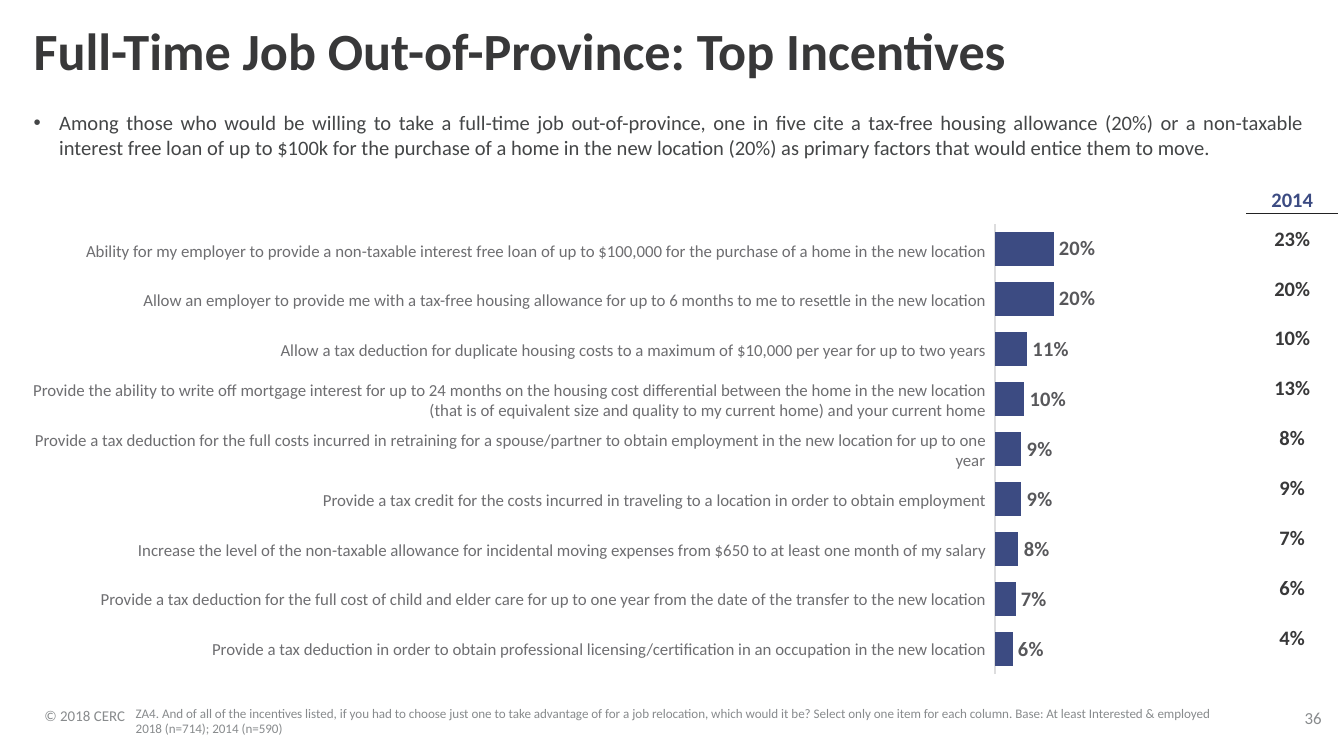
from typing import NamedTuple

from lxml import etree
from pptx import Presentation
from pptx.chart.data import CategoryChartData
from pptx.dml.color import RGBColor
from pptx.enum.chart import (XL_CHART_TYPE, XL_LABEL_POSITION,
                             XL_TICK_LABEL_POSITION, XL_TICK_MARK)
from pptx.enum.text import MSO_ANCHOR, MSO_AUTO_SIZE, PP_ALIGN
from pptx.oxml import parse_xml
from pptx.oxml.ns import nsdecls, qn
from pptx.util import Inches, Pt

LEFT, RIGHT, MID, FULL = PP_ALIGN.LEFT, PP_ALIGN.RIGHT, PP_ALIGN.CENTER, PP_ALIGN.JUSTIFY
TOP, BOTTOM, CENTER = MSO_ANCHOR.TOP, MSO_ANCHOR.BOTTOM, MSO_ANCHOR.MIDDLE
BAR, OUTSIDE = XL_CHART_TYPE.BAR_CLUSTERED, XL_LABEL_POSITION.OUTSIDE_END
NO_TICK, NO_LABEL = XL_TICK_MARK.NONE, XL_TICK_LABEL_POSITION.NONE
NO_FIT = MSO_AUTO_SIZE.NONE

FONT = "Calibri"
DARK = RGBColor(0x38, 0x38, 0x39)
TEXT = RGBColor(0x44, 0x46, 0x47)
GRAY = RGBColor(0x6E, 0x6E, 0x71)
PALE = RGBColor(0x88, 0x8B, 0x8D)
VALUE = RGBColor(0x58, 0x58, 0x5B)
AXIS = RGBColor(0xDD, 0xDD, 0xDE)
BLUE = RGBColor(0x3C, 0x4B, 0x82)


class Style(NamedTuple):
    size: float
    color: RGBColor
    bold: bool = False
    align: PP_ALIGN = LEFT
    anchor: MSO_ANCHOR = TOP
    line: float = 1.0


class Item(NamedTuple):
    label: str
    now: float
    past: str


ITEMS = [
    Item("Ability for my employer to provide a non-taxable interest free loan of up to "
         "$100,000 for the purchase of a home in the new location", 0.20, "23%"),
    Item("Allow an employer to provide me with a tax-free housing allowance for up to "
         "6 months to me to resettle in the new location", 0.20, "20%"),
    Item("Allow a tax deduction for duplicate housing costs to a maximum of $10,000 "
         "per year for up to two years", 0.11, "10%"),
    Item("Provide the ability to write off mortgage interest for up to 24 months on the "
         "housing cost differential between the home in the new location (that is of "
         "equivalent size and quality to my current home) and your current home", 0.10, "13%"),
    Item("Provide a tax deduction for the full costs incurred in retraining for a "
         "spouse/partner to obtain employment in the new location for up to one year",
         0.09, "8%"),
    Item("Provide a tax credit for the costs incurred in traveling to a location in "
         "order to obtain employment", 0.09, "9%"),
    Item("Increase the level of the non-taxable allowance for incidental moving expenses "
         "from $650 to at least one month of my salary", 0.08, "7%"),
    Item("Provide a tax deduction for the full cost of child and elder care for up to one "
         "year from the date of the transfer to the new location", 0.07, "6%"),
    Item("Provide a tax deduction in order to obtain professional licensing/certification "
         "in an occupation in the new location", 0.06, "4%"),
]
ROW = Inches(3.34) // len(ITEMS)


def set_font(font, style: Style) -> None:
    font.name, font.size, font.bold = FONT, Pt(style.size), style.bold
    font.color.rgb = style.color


def fill_text(shape, box: tuple, text: str, style: Style,
              wrap: bool = True, bullet: bool = False) -> None:
    """Place a shape and set its single paragraph."""
    shape.left, shape.top, shape.width, shape.height = (Inches(v) for v in box)
    frame = shape.text_frame
    frame.text = text
    frame.auto_size = NO_FIT
    frame.word_wrap, frame.vertical_anchor = wrap, style.anchor
    frame.margin_left = frame.margin_right = frame.margin_top = frame.margin_bottom = 0
    para = frame.paragraphs[0]
    para.alignment, para.line_spacing, para.space_before = style.align, style.line, Pt(0)
    props = para._p.get_or_add_pPr()
    indent = Inches(0.19) if bullet else 0
    props.set("marL", str(indent))
    props.set("indent", str(-indent))
    if bullet:
        etree.SubElement(props, qn("a:buChar"), char="•")
    else:
        etree.SubElement(props, qn("a:buNone"))
    set_font(para.font, style)


def fill_cell(cell, text: str, style: Style, pad: float = 0.01) -> None:
    cell.text = text
    cell.fill.background()
    cell.vertical_anchor = CENTER
    cell.margin_left = cell.margin_right = cell.margin_top = Inches(pad)
    cell.margin_bottom = 0
    para = cell.text_frame.paragraphs[0]
    para.alignment = style.align
    set_font(para.font, style)


def add_grid(slide, left: float, top: float, width: float, rows: int):
    """Add a plain one-column table with equal rows."""
    table = slide.shapes.add_table(rows, 1, Inches(left), Inches(top),
                                   Inches(width), ROW * rows).table
    table.first_row = table.horz_banding = False
    for row in table.rows:
        row.height = ROW
    return table


def add_rule(cell, side: str) -> None:
    cell._tc.get_or_add_tcPr().insert(0, parse_xml(
        f'<a:{side} {nsdecls("a")} w="6350"><a:solidFill><a:srgbClr val="222223"/>'
        f'</a:solidFill></a:{side}>'))


def add_bars(slide) -> None:
    data = CategoryChartData(number_format="0%")
    data.categories = [str(n) for n in range(1, len(ITEMS) + 1)]
    data.add_series("Series 1", [item.now for item in ITEMS])
    chart = slide.shapes.add_chart(BAR, Inches(7.28), Inches(1.56), Inches(2.3),
                                   Inches(3.71), data).chart
    chart.has_legend = chart.has_title = False
    set_font(chart.font, Style(10, DARK))

    # Axes
    cat, val = chart.category_axis, chart.value_axis
    cat.reverse_order = True
    cat.tick_label_position = NO_LABEL
    cat.major_tick_mark = cat.minor_tick_mark = NO_TICK
    cat.format.line.color.rgb, cat.format.line.width = AXIS, Pt(0.75)
    val.minimum_scale, val.maximum_scale = 0, 1
    val.has_major_gridlines = val.visible = False

    # Bars and their labels
    plot = chart.plots[0]
    plot.gap_width, plot.vary_by_categories = 50, False
    fill = plot.series[0].format.fill
    fill.solid()
    fill.fore_color.rgb = BLUE
    plot.has_data_labels = True
    labels = plot.data_labels
    labels.show_value, labels.position = True, OUTSIDE
    labels.number_format, labels.number_format_is_linked = "0%", False
    set_font(labels.font, Style(11, VALUE, True))

    # Fixed plot area
    area = chart._chartSpace.chart.plotArea
    for old in area.findall(qn("c:layout")):
        area.remove(old)
    spots = {"x": 0.054, "y": 0.029, "w": 0.946, "h": 0.903}
    modes = "".join(f'<c:{k}Mode val="edge"/>' for k in "xy")
    sizes = "".join(f'<c:{k} val="{v}"/>' for k, v in spots.items())
    area.insert(0, parse_xml(
        f'<c:layout {nsdecls("c")}><c:manualLayout><c:layoutTarget val="inner"/>'
        f'{modes}{sizes}</c:manualLayout></c:layout>'))


def main() -> None:
    deck = Presentation()
    deck.slide_width = Inches(10)
    deck.slide_height = deck.slide_width * 9 // 16
    slide = deck.slides.add_slide(deck.slide_layouts[3])
    title, body, note = slide.placeholders

    # Title, finding and footnote
    fill_text(title, (0.25, 0.19, 8.76, 0.42),
              "Full-Time Job Out-of-Province: Top Incentives", Style(28, DARK, True, line=0.9))
    fill_text(body, (0.25, 0.82, 9.46, 0.49),
              "Among those who would be willing to take a full-time job out-of-province, one in "
              "five cite a tax-free housing allowance (20%) or a non-taxable interest free loan "
              "of up to $100k for the purchase of a home in the new location (20%) as primary "
              "factors that would entice them to move.", Style(11, TEXT, align=FULL), bullet=True)
    fill_text(note, (1.01, 5.24, 8.16, 0.24),
              "ZA4. And of all of the incentives listed, if you had to choose just one to take "
              "advantage of for a job relocation, which would it be? Select only one item for "
              "each column. Base: At least Interested & employed 2018 (n=714); 2014 (n=590)",
              Style(7, PALE, anchor=BOTTOM))

    # Copyright and page number
    for box, text, style in [
        ((0.33, 5.21, 0.76, 0.18), "© 2018 CERC", Style(8, PALE, anchor=BOTTOM, line=0.85)),
        ((9.63, 5.29, 0.28, 0.13), "36", Style(9, PALE, False, MID, BOTTOM, 0.85)),
    ]:
        fill_text(slide.shapes.add_textbox(0, 0, 0, 0), box, text, style, wrap=False)

    # Chart, 2014 column and incentive labels
    add_bars(slide)
    past = add_grid(slide, 9.28, 1.4, 0.67, len(ITEMS) + 1)
    past.rows[0].height = Inches(0.19)
    fill_cell(past.cell(0, 0), "2014", Style(11, BLUE, True, MID), 0)
    names = add_grid(slide, 0.06, 1.68, 7.28, len(ITEMS))
    for n, item in enumerate(ITEMS):
        fill_cell(past.cell(n + 1, 0), item.past, Style(11, DARK, True, MID))
        fill_cell(names.cell(n, 0), item.label, Style(9, GRAY, align=RIGHT))
    add_rule(past.cell(0, 0), "lnB")
    add_rule(past.cell(1, 0), "lnT")

    deck.save("out.pptx")


if __name__ == "__main__":
    main()
